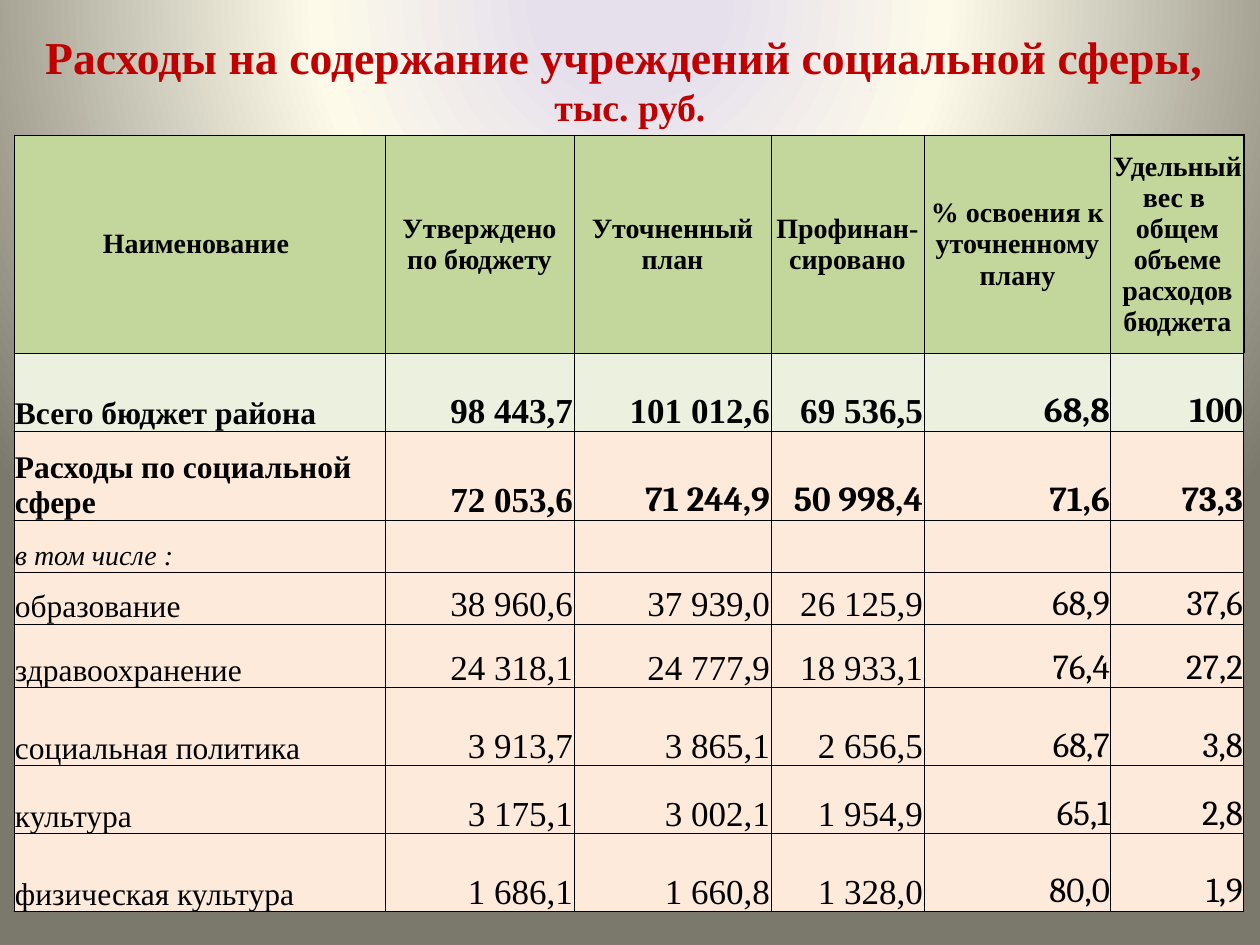
"""Builds a slide with a table of spending on social institutions."""
from pptx import Presentation
from pptx.dml.color import RGBColor
from pptx.enum.text import MSO_ANCHOR, PP_ALIGN
from pptx.oxml import parse_xml
from pptx.oxml.ns import nsdecls
from pptx.util import Pt

PX = 914400 / 126
BLACK = RGBColor(0x00, 0x00, 0x00)
RED = RGBColor(0xC0, 0x00, 0x00)
GREEN = RGBColor(0xC3, 0xD6, 0x9B)
PALE_GREEN = RGBColor(0xEB, 0xF1, 0xDE)
PEACH = RGBColor(0xFD, 0xEA, 0xDA)
LILAC = RGBColor(0xE6, 0xE0, 0xEC)
CREAM = RGBColor(0xFD, 0xFA, 0xEA)
OLIVE = RGBColor(0x7B, 0x79, 0x6B)
LEFT, CENTER, RIGHT = PP_ALIGN.LEFT, PP_ALIGN.CENTER, PP_ALIGN.RIGHT
JUSTIFY = PP_ALIGN.JUSTIFY
MIDDLE, BOTTOM = MSO_ANCHOR.MIDDLE, MSO_ANCHOR.BOTTOM
SERIF, FIGURES = "Times New Roman", "Cambria"

COLS = [371, 189, 197, 153, 187, 133]
HEIGHTS = [218, 78, 89, 52, 52, 64, 78, 68, 78]
ROWS = [
    ["Наименование ", "Утверждено по бюджету", "Уточненный план", "Профинан-сировано",
     "% освоения к уточненному плану", "Удельный вес в  общем объеме расходов бюджета"],
    ["Всего бюджет района", "98 443,7", "101 012,6", "69 536,5", "68,8", "100"],
    ["Расходы по социальной сфере", "72 053,6", "71 244,9", "50 998,4", "71,6", "73,3"],
    ["в том числе :", "", "", "", "", ""],
    ["образование", "38 960,6", "37 939,0", "26 125,9", "68,9", "37,6"],
    ["здравоохранение", "24 318,1", "24 777,9", "18 933,1", "76,4", "27,2"],
    ["социальная политика", "3 913,7", "3 865,1", "2 656,5", "68,7", "3,8"],
    ["культура", "3 175,1", "3 002,1", "1 954,9", "65,1", "2,8"],
    ["физическая культура", "1 686,1", "1 660,8", "1 328,0", "80,0", "1,9"],
]
HEADER, TOTAL, SOCIAL, INCLUDING = range(4)


def px(n):
    return round(n * PX)


class Slide:
    """Holds the style and the current slide."""

    def __init__(self, prs):
        self.s = prs.slides.add_slide(prs.slide_layouts[5])

    def background(self, stops):
        gs = "".join(f'<a:gs pos="{pos * 1000}"><a:srgbClr val="{color}"/></a:gs>'
                     for pos, color in stops)
        self.s.element.cSld.insert(0, parse_xml(
            f'<p:bg {nsdecls("p", "a")}><p:bgPr><a:gradFill rotWithShape="1">'
            f'<a:gsLst>{gs}</a:gsLst><a:path path="circle">'
            '<a:fillToRect l="50000" t="-80000" r="50000" b="180000"/></a:path>'
            '</a:gradFill><a:effectLst/></p:bgPr></p:bg>'))

    def font(self, r, size, name, color, bold=False, italic=False):
        f = r.font
        f.size, f.name, f.bold, f.italic = Pt(size), name, bold, italic
        f.color.rgb = color

    def title(self, text, sizes, x, y, w, h):
        sp = self.s.shapes.title
        sp.left, sp.top, sp.width, sp.height = map(px, (x, y, w, h))
        tf = sp.text_frame
        tf.text = text
        tf.word_wrap = True
        tf.vertical_anchor = BOTTOM
        p = tf.paragraphs[0]
        p.alignment = CENTER
        for r, size in zip(p.runs, sizes):
            self.font(r, size, SERIF, RED, bold=True)

    def border(self, cell, widths):
        tcPr = cell._tc.get_or_add_tcPr()
        for i, (side, width) in enumerate(zip("LRTB", widths)):
            tcPr.insert(i, parse_xml(
                f'<a:ln{side} {nsdecls("a")} w="{Pt(width)}"><a:solidFill>'
                f'<a:srgbClr val="{BLACK}"/></a:solidFill></a:ln{side}>'))

    def cell(self, cell, text, fill, align, anchor, size, name, bold, italic):
        cell.fill.solid()
        cell.fill.fore_color.rgb = fill
        cell.margin_left = cell.margin_right = cell.margin_top = px(1)
        cell.margin_bottom = 0
        cell.vertical_anchor = anchor
        cell.text_frame.text = text
        p = cell.text_frame.paragraphs[0]
        p.alignment = align
        for r in p.runs:
            self.font(r, size, name, BLACK, bold, italic)

    def table(self, x, y):
        tbl = self.s.shapes.add_table(len(ROWS), len(COLS), px(x), px(y),
                                      px(sum(COLS)), px(sum(HEIGHTS))).table
        tbl.first_row = tbl.horz_banding = False
        for col, w in zip(tbl.columns, COLS):
            col.width = px(w)
        for row, h in zip(tbl.rows, HEIGHTS):
            row.height = px(h)
        fills = {HEADER: GREEN, TOTAL: PALE_GREEN}
        for i, row in enumerate(ROWS):
            for j, text in enumerate(row):
                name, anchor = SERIF, BOTTOM
                if i == HEADER:
                    align, anchor, size = CENTER, MIDDLE, 16
                elif j == 0:
                    align = JUSTIFY if i > INCLUDING else LEFT
                    size = 16 if i == INCLUDING else 18
                else:
                    align, size = RIGHT, 20
                    if j >= (2 if i == SOCIAL else 4):
                        name = FIGURES
                cell = tbl.cell(i, j)
                self.cell(cell, text, fills.get(i, PEACH), align, anchor, size, name,
                          bold=i <= SOCIAL, italic=i == INCLUDING)
                corner = i == HEADER and j == len(COLS) - 1
                self.border(cell, (0.5, 1, 1, 0.5) if corner else (0.5,) * 4)


def main():
    prs = Presentation()
    prs.slide_width, prs.slide_height = px(1260), px(945)
    slide = Slide(prs)
    slide.background([(11, LILAC), (40, CREAM), (100, OLIVE)])
    slide.title("Расходы на содержание учреждений социальной сферы, \vтыс. руб.",
                (26.1, 21.6), 0, 16, 1260, 119)
    slide.table(14, 135)
    prs.save("out.pptx")


if __name__ == "__main__":
    main()
